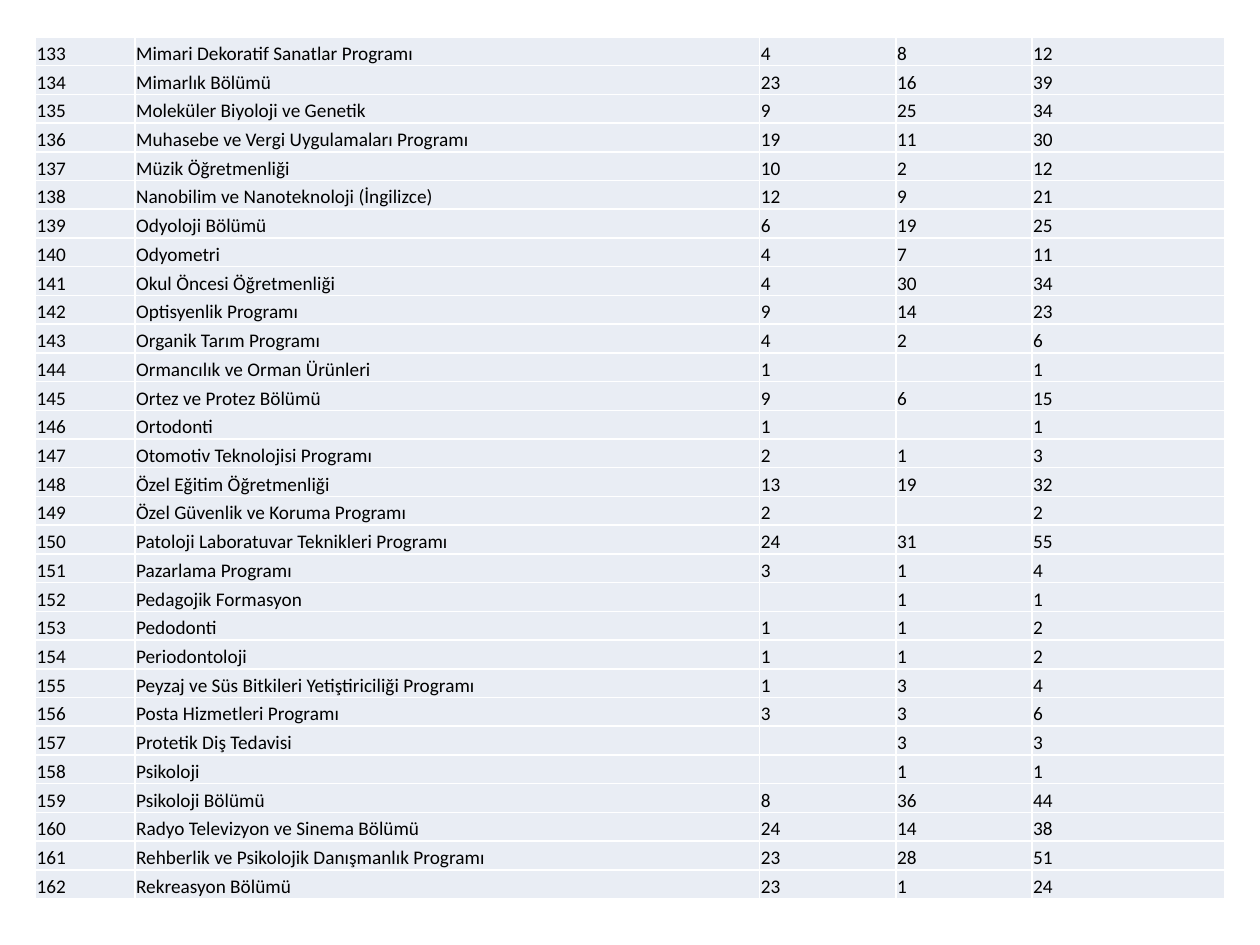
from lxml.etree import SubElement
from pptx import Presentation
from pptx.dml.color import RGBColor
from pptx.enum.text import MSO_ANCHOR
from pptx.oxml.ns import qn
from pptx.util import Pt

BLACK = RGBColor(0x00, 0x00, 0x00)
WHITE = RGBColor(0xFF, 0xFF, 0xFF)
PALE_BLUE = RGBColor(0xE9, 0xED, 0xF4)

FIRST_NUMBER = 133
PROGRAMMES = [
    ("Mimari Dekoratif Sanatlar Programı", 4, 8),
    ("Mimarlık Bölümü", 23, 16),
    ("Moleküler Biyoloji ve Genetik", 9, 25),
    ("Muhasebe ve Vergi Uygulamaları Programı", 19, 11),
    ("Müzik Öğretmenliği", 10, 2),
    ("Nanobilim ve Nanoteknoloji (İngilizce)", 12, 9),
    ("Odyoloji Bölümü", 6, 19),
    ("Odyometri", 4, 7),
    ("Okul Öncesi Öğretmenliği", 4, 30),
    ("Optisyenlik Programı", 9, 14),
    ("Organik Tarım Programı", 4, 2),
    ("Ormancılık ve Orman Ürünleri", 1, 0),
    ("Ortez ve Protez Bölümü", 9, 6),
    ("Ortodonti", 1, 0),
    ("Otomotiv Teknolojisi Programı", 2, 1),
    ("Özel Eğitim Öğretmenliği", 13, 19),
    ("Özel Güvenlik ve Koruma Programı", 2, 0),
    ("Patoloji Laboratuvar Teknikleri Programı", 24, 31),
    ("Pazarlama Programı", 3, 1),
    ("Pedagojik Formasyon", 0, 1),
    ("Pedodonti", 1, 1),
    ("Periodontoloji", 1, 1),
    ("Peyzaj ve Süs Bitkileri Yetiştiriciliği Programı", 1, 3),
    ("Posta Hizmetleri Programı", 3, 3),
    ("Protetik Diş Tedavisi", 0, 3),
    ("Psikoloji", 0, 1),
    ("Psikoloji Bölümü", 8, 36),
    ("Radyo Televizyon ve Sinema Bölümü", 24, 14),
    ("Rehberlik ve Psikolojik Danışmanlık Programı", 23, 28),
    ("Rekreasyon Bölümü", 23, 1),
]
COLUMN_WIDTHS = [56.9, 357.1, 77.8, 77.8, 110.2]
ROW_HEIGHT = 16.44


class SlideBuilder:
    """Hold the style and the current slide, and add elements to it."""

    font_format = {"name": "Calibri", "size": Pt(11)}
    cell_format = {
        "vertical_anchor": MSO_ANCHOR.BOTTOM,
        "margin_left": Pt(0.72),
        "margin_top": Pt(0.72),
        "margin_right": Pt(0.72),
        "margin_bottom": Pt(0),
    }
    table_format = {"first_row": False, "horz_banding": False}
    border_width = Pt(1)

    def __init__(self, slide):
        self.slide = slide

    def apply(self, target, values):
        for attribute, value in values.items():
            setattr(target, attribute, value)

    def borders(self, cell):
        properties = cell._tc.get_or_add_tcPr()
        for side in ("lnL", "lnR", "lnT", "lnB"):
            line = SubElement(properties, qn(f"a:{side}"), w=str(self.border_width))
            fill = SubElement(line, qn("a:solidFill"))
            SubElement(fill, qn("a:srgbClr"), val=str(WHITE))

    def cell(self, cell, text):
        self.apply(cell, self.cell_format)
        self.borders(cell)
        cell.fill.solid()
        cell.fill.fore_color.rgb = PALE_BLUE
        paragraph = cell.text_frame.paragraphs[0]
        if text:
            run = paragraph.add_run()
            run.text = text
            self.apply(run.font, self.font_format)
            run.font.color.rgb = BLACK
        else:
            size = self.font_format["size"].centipoints
            SubElement(paragraph._p, qn("a:endParaRPr"), sz=str(size))

    def table(self, left, top, widths, row_height, rows):
        table = self.slide.shapes.add_table(
            len(rows), len(widths), Pt(left), Pt(top),
            Pt(sum(widths)), Pt(row_height * len(rows)),
        ).table
        self.apply(table, self.table_format)
        for column, width in zip(table.columns, widths):
            column.width = Pt(width)
        for table_row, values in zip(table.rows, rows):
            table_row.height = Pt(row_height)
            for cell, value in zip(table_row.cells, values):
                self.cell(cell, str(value or ""))


def main():
    presentation = Presentation()
    presentation.slide_width, presentation.slide_height = Pt(720), Pt(540)
    builder = SlideBuilder(presentation.slides.add_slide(presentation.slide_layouts[6]))
    rows = [
        (number, programme, first, second, first + second)
        for number, (programme, first, second) in enumerate(PROGRAMMES, FIRST_NUMBER)
    ]
    builder.table(20.16, 21.1, COLUMN_WIDTHS, ROW_HEIGHT, rows)
    presentation.save("out.pptx")


if __name__ == "__main__":
    main()
